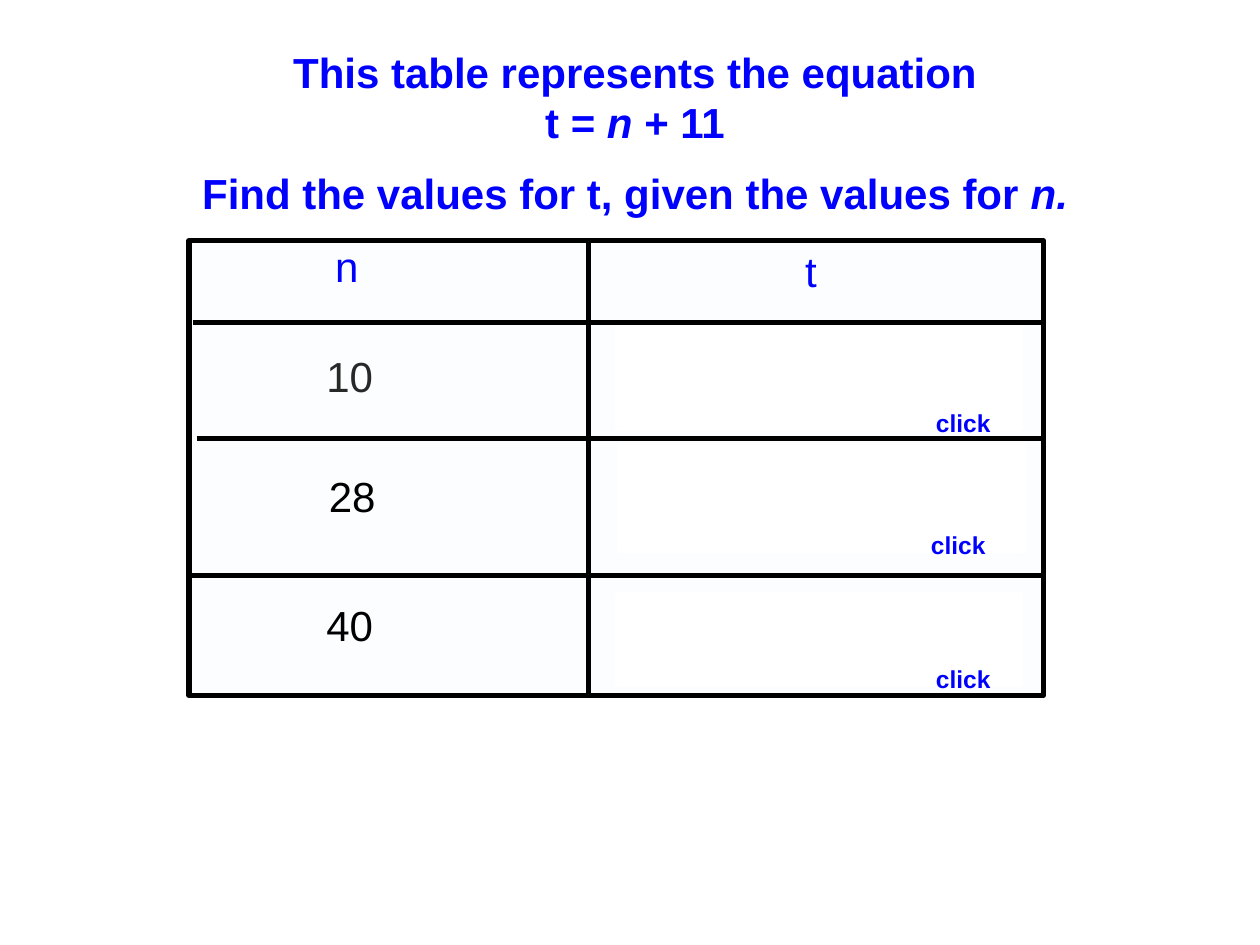
from typing import NamedTuple

from pptx import Presentation
from pptx.dml.color import RGBColor
from pptx.enum.shapes import MSO_CONNECTOR, MSO_SHAPE
from pptx.enum.text import MSO_ANCHOR, MSO_AUTO_SIZE, PP_ALIGN
from pptx.oxml.ns import qn
from pptx.util import Inches, Pt
from lxml.etree import SubElement

BLUE, BLACK, WHITE, TINT = "0000FF", "000000", "FFFFFF", "FCFDFF"


class Box(NamedTuple):
    left: float
    top: float
    width: float
    height: float


class Rule(NamedTuple):
    x1: float
    y1: float
    x2: float
    y2: float


class Label(NamedTuple):
    text: str
    box: Box
    color: str


class Cover(NamedTuple):
    """White panel over an answer, with its click prompt."""
    panel: Box
    prompt: Box


FRAME = Box(1.5, 1.91, 6.78, 3.61)
RULES = [
    Rule(1.53, 2.56, 8.28, 2.56),
    Rule(1.56, 3.48, 8.3, 3.48),
    Rule(1.52, 4.57, 8.28, 4.57),
    Rule(4.67, 1.89, 4.67, 5.54),
]
LABELS = [
    Label("n", Box(2.58, 1.87, 0.97, 0.49), BLUE),
    Label("t", Box(6.31, 1.91, 0.82, 0.49), BLUE),
    Label("10", Box(2.51, 2.74, 1.3, 0.49), "282828"),
    Label("28", Box(2.53, 3.69, 1.26, 0.49), BLACK),
    Label("40", Box(2.51, 4.72, 1.4, 0.49), BLACK),
]
COVERS = [
    Cover(Box(4.9, 2.57, 3.2, 0.83), Box(7.33, 3.19, 0.84, 0.34)),
    Cover(Box(4.92, 3.54, 3.2, 0.83), Box(7.29, 4.16, 0.89, 0.34)),
    Cover(Box(4.9, 4.72, 3.2, 0.71), Box(7.33, 5.22, 0.84, 0.34)),
]
HEADING = [
    [("This table represents the equation", False)],
    [("t = ", False), ("n", True), (" + 11", False)],
    [("Find the values for t, given the values for ", False), ("n.", True)],
]


def rgb(color: str) -> RGBColor:
    return RGBColor.from_string(color)


def inches(box: Box) -> list:
    return [Inches(v) for v in box]


def add_run(p, text: str, size: float, color: str, bold=False, italic=False) -> None:
    r = p.add_run()
    r.text = text
    r.font.name = "Arial"
    r.font.size = Pt(size)
    r.font.bold = bold
    r.font.italic = italic
    r.font.color.rgb = rgb(color)


def set_insets(tf, side: float, end: float) -> None:
    tf.margin_left = tf.margin_right = Inches(side)
    tf.margin_top = tf.margin_bottom = Inches(end)


def add_panel(s, box: Box, fill: str, line: str) -> None:
    sp = s.shapes.add_shape(MSO_SHAPE.RECTANGLE, *inches(box))
    sp.shadow.inherit = False
    sp.fill.solid()
    sp.fill.fore_color.rgb = rgb(fill)
    sp.line.color.rgb = rgb(line)
    sp.line.width = Pt(3)


def add_rule(s, rule: Rule) -> None:
    line = s.shapes.add_connector(MSO_CONNECTOR.STRAIGHT, *[Inches(v) for v in rule])
    line.line.color.rgb = rgb(BLACK)
    line.line.width = Pt(3)
    SubElement(line._element.spPr, qn("a:effectLst"))


def add_label(s, label: Label, size=24, bold=False, insets=(0.08, 0.04)) -> None:
    tf = s.shapes.add_textbox(*inches(label.box)).text_frame
    tf.word_wrap = True
    set_insets(tf, *insets)
    add_run(tf.paragraphs[0], label.text, size, label.color, bold)


def fill_heading(title) -> None:
    title.left, title.top, title.width, title.height = inches(Box(1.08, 0.32, 7.92, 1.46))
    tf = title.text_frame
    tf.word_wrap = True
    tf.auto_size = MSO_AUTO_SIZE.NONE
    tf.vertical_anchor = MSO_ANCHOR.MIDDLE
    set_insets(tf, 0.08, 0.04)
    for i, parts in enumerate(HEADING):
        p = tf.add_paragraph() if i else tf.paragraphs[0]
        p.alignment = PP_ALIGN.CENTER
        for text, italic in parts:
            add_run(p, text, 24, BLUE, True, italic)
    p.space_before = Pt(12)


def main() -> None:
    prs = Presentation()
    prs.slide_width, prs.slide_height = Inches(10), Inches(7.5)
    s = prs.slides.add_slide(prs.slide_layouts[5])
    fill_heading(s.shapes.title)
    add_panel(s, FRAME, TINT, BLACK)
    for cover in COVERS:
        add_panel(s, cover.panel, WHITE, WHITE)
    for rule in RULES:
        add_rule(s, rule)
    for label in LABELS:
        add_label(s, label)
    for cover in COVERS:
        add_label(s, Label("click", cover.prompt, BLUE), 14, True, (0.1, 0.05))
    prs.save("out.pptx")


if __name__ == "__main__":
    main()
